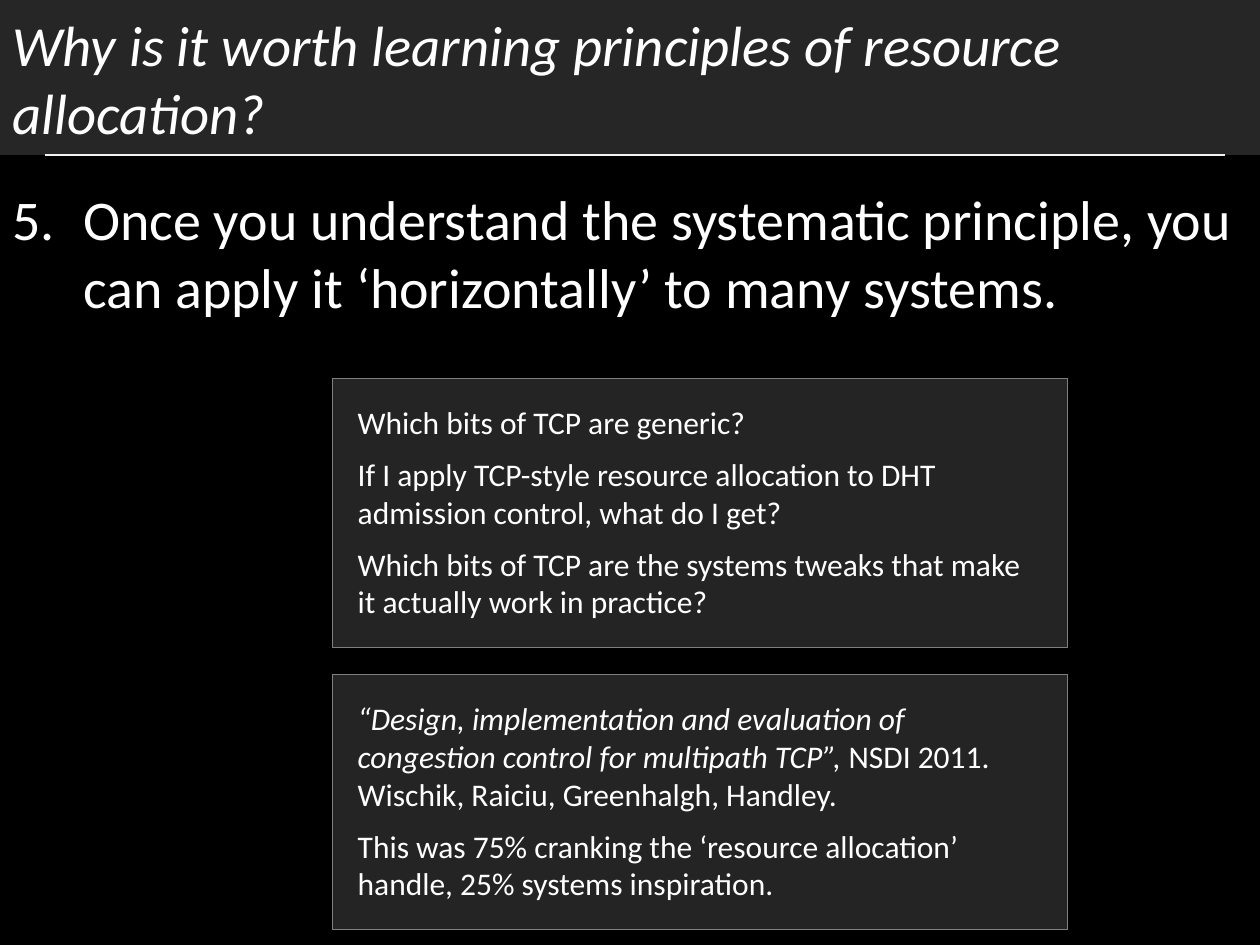
import dataclasses

import pptx
import pptx.dml.color
import pptx.enum.shapes
import pptx.enum.text
import pptx.oxml
import pptx.oxml.ns
import pptx.util

Pt = pptx.util.Pt
RGB = pptx.dml.color.RGBColor.from_string
ANCHOR = pptx.enum.text.MSO_ANCHOR
qn = pptx.oxml.ns.qn


@dataclasses.dataclass(frozen=True)
class Theme:
    font: str = "Calibri"
    background: str = "000000"
    text: str = "FFFFFF"
    banner: str = "262626"
    rule: str = "F2F2F2"
    panel: str = "595959"
    panel_alpha: int = 41
    panel_line: str = "808080"
    title_size: float = 32.4
    body_size: float = 32
    panel_size: float = 18


def add_xml(parent, tag, **attrs):
    child = pptx.oxml.parse_xml(f"<a:{tag} {pptx.oxml.ns.nsdecls('a')}/>")
    for name, value in attrs.items():
        child.set(name, str(value))
    parent.append(child)


class Slide:
    def __init__(self, prs, theme):
        self.theme = theme
        self.s = prs.slides.add_slide(prs.slide_layouts[6])
        fill = self.s.background.fill
        fill.solid()
        fill.fore_color.rgb = RGB(theme.background)

    def run(self, p, text, size, italic=False):
        r = p.add_run()
        r.text = text
        r.font.name = self.theme.font
        r.font.size = Pt(size)
        r.font.italic = italic
        r.font.color.rgb = RGB(self.theme.text)

    def rect(self, left, top, width, height, color):
        kind = pptx.enum.shapes.MSO_SHAPE.RECTANGLE
        sp = self.s.shapes.add_shape(kind, Pt(left), Pt(top), Pt(width), Pt(height))
        sp.shadow.inherit = False
        sp.fill.solid()
        sp.fill.fore_color.rgb = RGB(color)
        sp.line.fill.background()
        sp.text_frame.word_wrap = True
        return sp

    def title(self, left, top, width, height, text):
        sp = self.rect(left, top, width, height, self.theme.banner)
        sp.text_frame.vertical_anchor = ANCHOR.MIDDLE
        p = sp.text_frame.paragraphs[0]
        p.alignment = pptx.enum.text.PP_ALIGN.LEFT
        self.run(p, text, self.theme.title_size, italic=True)

    def numbered(self, left, top, width, height, start, indent, text):
        sp = self.s.shapes.add_textbox(Pt(left), Pt(top), Pt(width), Pt(height))
        sp.text_frame.word_wrap = True
        p = sp.text_frame.paragraphs[0]
        pPr = p._p.get_or_add_pPr()
        pPr.set("marL", str(Pt(indent)))
        pPr.set("indent", str(-Pt(indent)))
        add_xml(pPr, "buFont", typeface="+mj-lt")
        add_xml(pPr, "buAutoNum", type="arabicPeriod", startAt=start)
        self.run(p, text, self.theme.body_size)

    def rule(self, x1, x2, y):
        kind = pptx.enum.shapes.MSO_CONNECTOR.STRAIGHT
        cxn = self.s.shapes.add_connector(kind, Pt(x1), Pt(y), Pt(x2), Pt(y))
        cxn.line.color.rgb = RGB(self.theme.rule)
        cxn.line.width = Pt(0.75)
        add_xml(cxn._element.spPr, "effectLst")

    def panel(self, left, top, width, height, paragraphs):
        sp = self.rect(left, top, width, height, self.theme.panel)
        color = sp._element.spPr.find(qn("a:solidFill")).find(qn("a:srgbClr"))
        add_xml(color, "alpha", val=self.theme.panel_alpha * 1000)
        sp.line.color.rgb = RGB(self.theme.panel_line)
        sp.line.width = Pt(0.25)
        tf = sp.text_frame
        tf.vertical_anchor = ANCHOR.TOP
        tf.auto_size = pptx.enum.text.MSO_AUTO_SIZE.SHAPE_TO_FIT_TEXT
        tf.margin_left = tf.margin_right = Pt(14.4)
        tf.margin_top = tf.margin_bottom = Pt(14.4)
        for i, runs in enumerate(paragraphs):
            p = tf.add_paragraph() if i else tf.paragraphs[0]
            p.alignment = pptx.enum.text.PP_ALIGN.LEFT
            p.space_after = Pt(8)
            for text, italic in runs:
                self.run(p, text, self.theme.panel_size, italic)


def main():
    prs = pptx.Presentation()
    prs.slide_width, prs.slide_height = Pt(720), Pt(540)
    banner_height = 88.6
    panel_left, panel_width = 190, 420

    slide = Slide(prs, Theme())
    slide.title(0, 0, 720, banner_height,
                "Why is it worth learning principles of resource allocation?")
    slide.numbered(0, 102.2, 720, 128, 5, 40.5,
                   "Once you understand the systematic principle, you can apply it "
                   "‘horizontally’ to many systems.")
    slide.rule(25.5, 700, banner_height)
    slide.panel(panel_left, 216, panel_width, 154, [
        [("Which bits of TCP are generic?", False)],
        [("If I apply TCP-style resource allocation to DHT admission control, "
          "what do I get?", False)],
        [("Which bits of TCP are the systems tweaks that make it actually work "
          "in practice?", False)],
    ])
    slide.panel(panel_left, 385.2, panel_width, 145.8, [
        [("“Design, implementation and evaluation of congestion control for "
          "multipath TCP”, ", True),
         ("NSDI 2011. Wischik, Raiciu, Greenhalgh, Handley.", False)],
        [("This was 75% cranking the ‘resource allocation’ handle, "
          "25% systems inspiration.", False)],
    ])
    prs.save("out.pptx")


if __name__ == "__main__":
    main()
